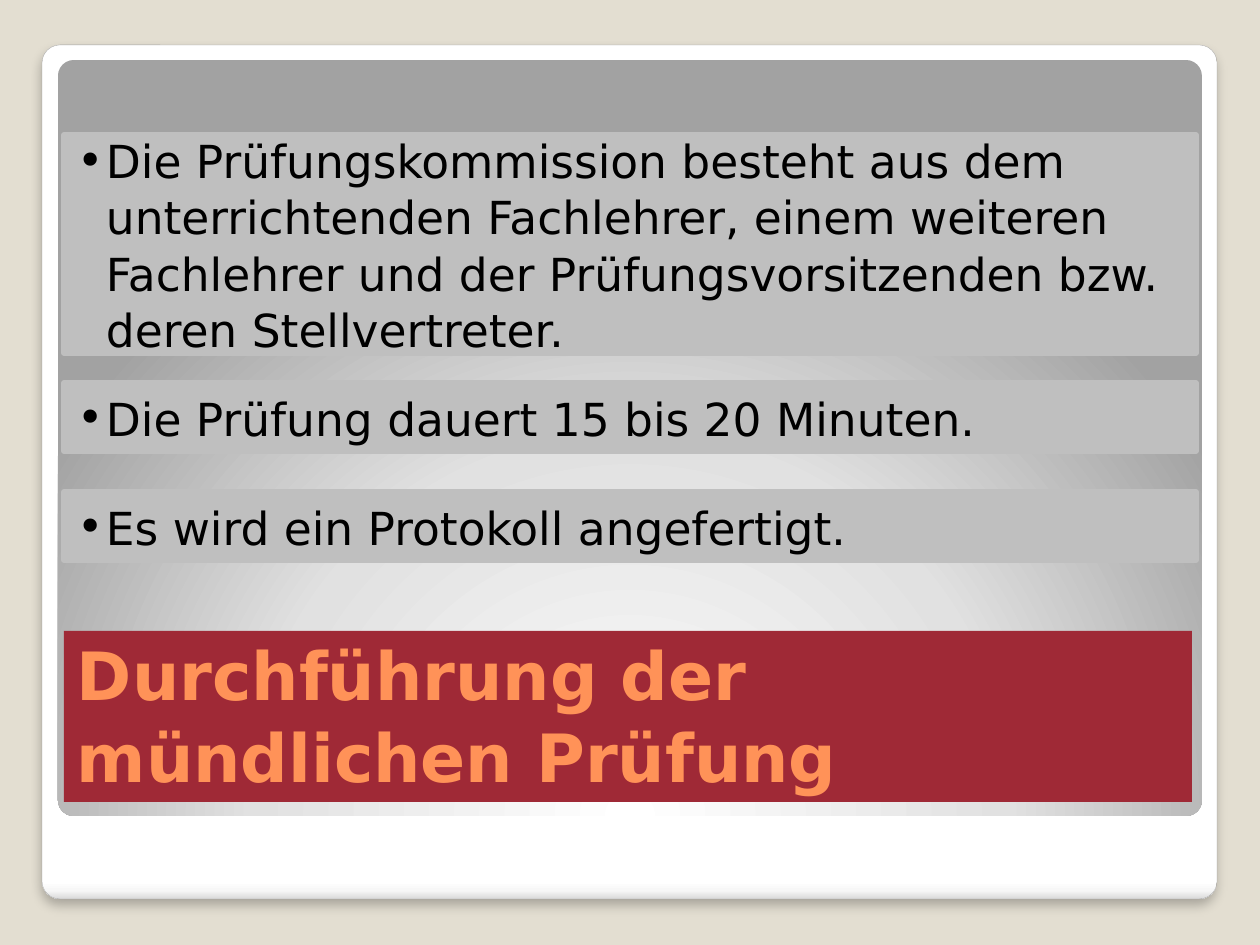
from dataclasses import dataclass

from lxml import etree
from pptx import Presentation
from pptx.dml.color import RGBColor
from pptx.enum.shapes import MSO_SHAPE
from pptx.enum.text import MSO_ANCHOR, PP_ALIGN
from pptx.oxml.ns import qn
from pptx.util import Pt

RECT = MSO_SHAPE.RECTANGLE
ROUNDED = MSO_SHAPE.ROUNDED_RECTANGLE
MIDDLE, BOTTOM = MSO_ANCHOR.MIDDLE, MSO_ANCHOR.BOTTOM
LEFT = PP_ALIGN.LEFT

EMU_PER_PX = 914400 / 126
FONT = "DejaVu Sans"
LINE_SPACING = 1.03
CORNER = 0.021
BULLET_INDENT = 29
COLORS = {
    "background": "E3DED1",
    "white": "FFFFFF",
    "card_edge": "F7F7F7",
    "card_bottom": "DADADA",
    "card_line": "A4A4A4",
    "panel_middle": "E1E1E1",
    "panel_outer": "A2A2A2",
    "title_fill": "9F2936",
    "title_text": "FF9258",
    "point_fill": "BFBFBF",
    "text": "000000",
    "shadow": "000000",
}


@dataclass(frozen=True)
class Area:
    left: int
    top: int
    width: int
    height: int


@dataclass(frozen=True)
class Point:
    top: int
    height: int
    text: str


CARD = Area(42, 45, 1175, 854)
PANEL = Area(58, 60, 1144, 756)
TITLE = Area(64, 631, 1128, 171)
POINTS = [
    Point(135, 218, "Die Prüfungskommission besteht aus dem unterrichtenden "
                    "Fachlehrer, einem weiteren Fachlehrer und der "
                    "Prüfungsvorsitzenden bzw. deren Stellvertreter."),
    Point(383, 68, "Die Prüfung dauert 15 bis 20 Minuten."),
    Point(492, 68, "Es wird ein Protokoll angefertigt."),
]


def px(length: int) -> int:
    return round(length * EMU_PER_PX)


def color(name: str) -> RGBColor:
    return RGBColor.from_string(COLORS[name])


def child(parent, tag: str, **attributes):
    values = {key: str(value) for key, value in attributes.items()}
    return etree.SubElement(parent, qn(tag), values)


def add_box(page, kind, area: Area):
    box = page.shapes.add_shape(
        kind, px(area.left), px(area.top), px(area.width), px(area.height))
    box.shadow.inherit = False
    box.line.fill.background()
    if kind == ROUNDED:
        box.adjustments[0] = CORNER
    return box


def set_gradient(box, stops: list[tuple[int, str]]):
    box.fill.gradient()
    gradient = box.element.spPr.find(qn("a:gradFill"))
    for element in list(gradient):
        gradient.remove(element)
    stop_list = child(gradient, "a:gsLst")
    for position, name in stops:
        stop = child(stop_list, "a:gs", pos=position * 1000)
        child(stop, "a:srgbClr", val=COLORS[name])
    return gradient


def add_card(page) -> None:
    card = add_box(page, ROUNDED, CARD)
    gradient = set_gradient(card, [
        (0, "white"), (98, "white"), (99, "card_edge"), (100, "card_bottom")])
    child(gradient, "a:lin", ang=90 * 60000, scaled=0)
    card.line.color.rgb = color("card_line")
    card.line.width = Pt(0.16)
    effects = card.element.spPr.find(qn("a:effectLst"))
    shadow = child(effects, "a:outerShdw", blurRad=Pt(6), dist=Pt(4),
                   dir=90 * 60000, algn="tl", rotWithShape=0)
    tint = child(shadow, "a:srgbClr", val=COLORS["shadow"])
    child(tint, "a:alpha", val=25000)


def add_panel(page) -> None:
    panel = add_box(page, ROUNDED, PANEL)
    gradient = set_gradient(panel, [
        (0, "white"), (55, "panel_middle"), (100, "panel_outer")])
    focus = child(gradient, "a:path", path="circle")
    child(focus, "a:fillToRect", l=50000, t=175000, r=50000, b=-75000)


def add_text_box(page, area: Area, fill: str, text: str, size: int,
                 text_color: str, anchor, bold: bool = False):
    box = add_box(page, RECT, area)
    box.fill.solid()
    box.fill.fore_color.rgb = color(fill)
    frame = box.text_frame
    frame.word_wrap = True
    frame.vertical_anchor = anchor
    frame.margin_left = frame.margin_right = px(13)
    frame.margin_top = frame.margin_bottom = px(6)
    para = frame.paragraphs[0]
    para.alignment = LEFT
    para.line_spacing = LINE_SPACING
    span = para.add_run()
    span.text = text
    span.font.name = FONT
    span.font.size = Pt(size)
    span.font.bold = bold
    span.font.color.rgb = color(text_color)
    return box


def add_point(page, point: Point) -> None:
    area = Area(64, point.top, 1132, point.height)
    box = add_text_box(page, area, "point_fill", point.text, 26, "text", MIDDLE)
    box.line.color.rgb = color("point_fill")
    box.line.width = Pt(3.35)
    properties = box.text_frame.paragraphs[0]._p.get_or_add_pPr()
    properties.set("marL", str(px(BULLET_INDENT)))
    properties.set("indent", str(-px(BULLET_INDENT)))
    child(properties, "a:buFont", typeface=FONT)
    child(properties, "a:buChar", char="•")


def main() -> None:
    deck = Presentation()
    deck.slide_width, deck.slide_height = px(1260), px(945)
    page = deck.slides.add_slide(deck.slide_layouts[6])
    page.background.fill.solid()
    page.background.fill.fore_color.rgb = color("background")
    add_card(page)
    add_panel(page)
    add_text_box(page, TITLE, "title_fill", "Durchführung der mündlichen Prüfung",
                 38, "title_text", BOTTOM, bold=True)
    for point in POINTS:
        add_point(page, point)
    deck.save("out.pptx")


if __name__ == "__main__":
    main()
